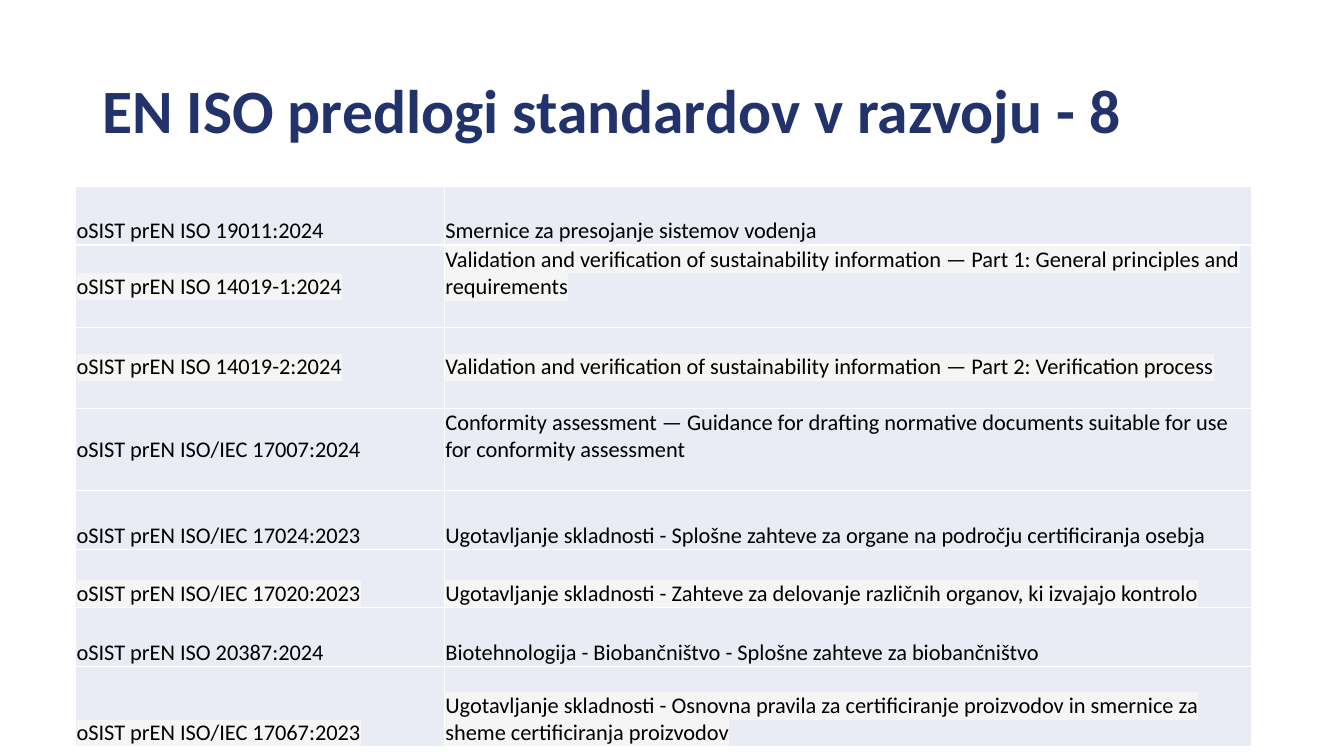
from dataclasses import dataclass

import lxml.etree
import pptx
import pptx.dml.color
import pptx.enum.text
import pptx.oxml.ns
import pptx.util

Pt = pptx.util.Pt
qn = pptx.oxml.ns.qn
COLORS = {
    "title": "22326A",
    "text": "000000",
    "cell": "E9EBF5",
    "border": "FFFFFF",
    "highlight": "F5F5F5",
}
FONT = "Calibri"
COLUMN_WIDTHS = (263.5, 576.7)
TEXT_LINE = 19.5


@dataclass
class Standard:
    code: str
    subject: str
    height: float = 41.8
    highlighted: bool = False
    bottom: float = 0


STANDARDS = [
    Standard("oSIST prEN ISO 19011:2024", "Smernice za presojanje sistemov vodenja"),
    Standard("oSIST prEN ISO 14019-1:2024",
             "Validation and verification of sustainability information — "
             "Part 1: General principles and requirements", 59, True, TEXT_LINE),
    Standard("oSIST prEN ISO 14019-2:2024",
             "Validation and verification of sustainability information — "
             "Part 2: Verification process", 57.6, True, TEXT_LINE),
    Standard("oSIST prEN ISO/IEC 17007:2024",
             "Conformity assessment — Guidance for drafting normative documents "
             "suitable for use for conformity assessment", 59, False, TEXT_LINE),
    Standard("oSIST prEN ISO/IEC 17024:2023",
             "Ugotavljanje skladnosti - Splošne zahteve za organe na področju "
             "certificiranja osebja"),
    Standard("oSIST prEN ISO/IEC 17020:2023",
             "Ugotavljanje skladnosti - Zahteve za delovanje različnih organov, "
             "ki izvajajo kontrolo", highlighted=True),
    Standard("oSIST prEN ISO 20387:2024",
             "Biotehnologija - Biobančništvo - Splošne zahteve za biobančništvo"),
    Standard("oSIST prEN ISO/IEC 17067:2023",
             "Ugotavljanje skladnosti - Osnovna pravila za certificiranje proizvodov "
             "in smernice za sheme certificiranja proizvodov", 57.6, True),
]


def rgb(name: str) -> pptx.dml.color.RGBColor:
    return pptx.dml.color.RGBColor.from_string(COLORS[name])


def style_font(font, size: float, color: str, bold: bool = False) -> None:
    font.name = FONT
    font.size = Pt(size)
    font.bold = bold
    font.color.rgb = rgb(color)


def add_highlight(run) -> None:
    highlight = lxml.etree.Element(qn("a:highlight"))
    lxml.etree.SubElement(highlight, qn("a:srgbClr"), val=COLORS["highlight"])
    run.font._element.find(qn("a:solidFill")).addnext(highlight)


def add_borders(cell) -> None:
    properties = cell._tc.get_or_add_tcPr()
    for position, side in enumerate(("lnL", "lnR", "lnT", "lnB")):
        line = lxml.etree.Element(qn(f"a:{side}"), w=str(Pt(1)))
        fill = lxml.etree.SubElement(line, qn("a:solidFill"))
        lxml.etree.SubElement(fill, qn("a:srgbClr"), val=COLORS["border"])
        properties.insert(position, line)


def fill_cell(cell, text: str, standard: Standard) -> None:
    cell.margin_left = cell.margin_right = cell.margin_top = Pt(0.7)
    cell.margin_bottom = Pt(standard.bottom)
    cell.vertical_anchor = pptx.enum.text.MSO_ANCHOR.BOTTOM
    cell.fill.solid()
    cell.fill.fore_color.rgb = rgb("cell")
    add_borders(cell)
    cell.text_frame.text = text
    run = cell.text_frame.paragraphs[0].runs[0]
    style_font(run.font, 16, "text")
    if standard.highlighted:
        add_highlight(run)


def add_title(slide, text: str) -> None:
    title = slide.shapes.add_textbox(Pt(66), Pt(28.8), Pt(828), Pt(104.4))
    frame = title.text_frame
    frame.word_wrap = True
    frame.vertical_anchor = pptx.enum.text.MSO_ANCHOR.MIDDLE
    frame.text = text
    frame.paragraphs[0].line_spacing = 0.9
    style_font(frame.paragraphs[0].runs[0].font, 44, "title", bold=True)


def add_standards(slide, standards: list[Standard]) -> None:
    table = slide.shapes.add_table(
        len(standards), len(COLUMN_WIDTHS), Pt(54), Pt(133.2),
        Pt(sum(COLUMN_WIDTHS)), Pt(sum(s.height for s in standards))).table
    table.first_row = table.horz_banding = False
    for column, width in zip(table.columns, COLUMN_WIDTHS):
        column.width = Pt(width)
    for row, standard in zip(table.rows, standards):
        row.height = Pt(standard.height)
        for cell, text in zip(row.cells, (standard.code, standard.subject)):
            fill_cell(cell, text, standard)


def main() -> None:
    presentation = pptx.Presentation()
    presentation.slide_width = Pt(960)
    presentation.slide_height = Pt(540)
    slide = presentation.slides.add_slide(presentation.slide_layouts[6])

    # Heading
    add_title(slide, "EN ISO predlogi standardov v razvoju - 8")

    # Draft standards and their subjects
    add_standards(slide, STANDARDS)

    presentation.save("out.pptx")


if __name__ == "__main__":
    main()
